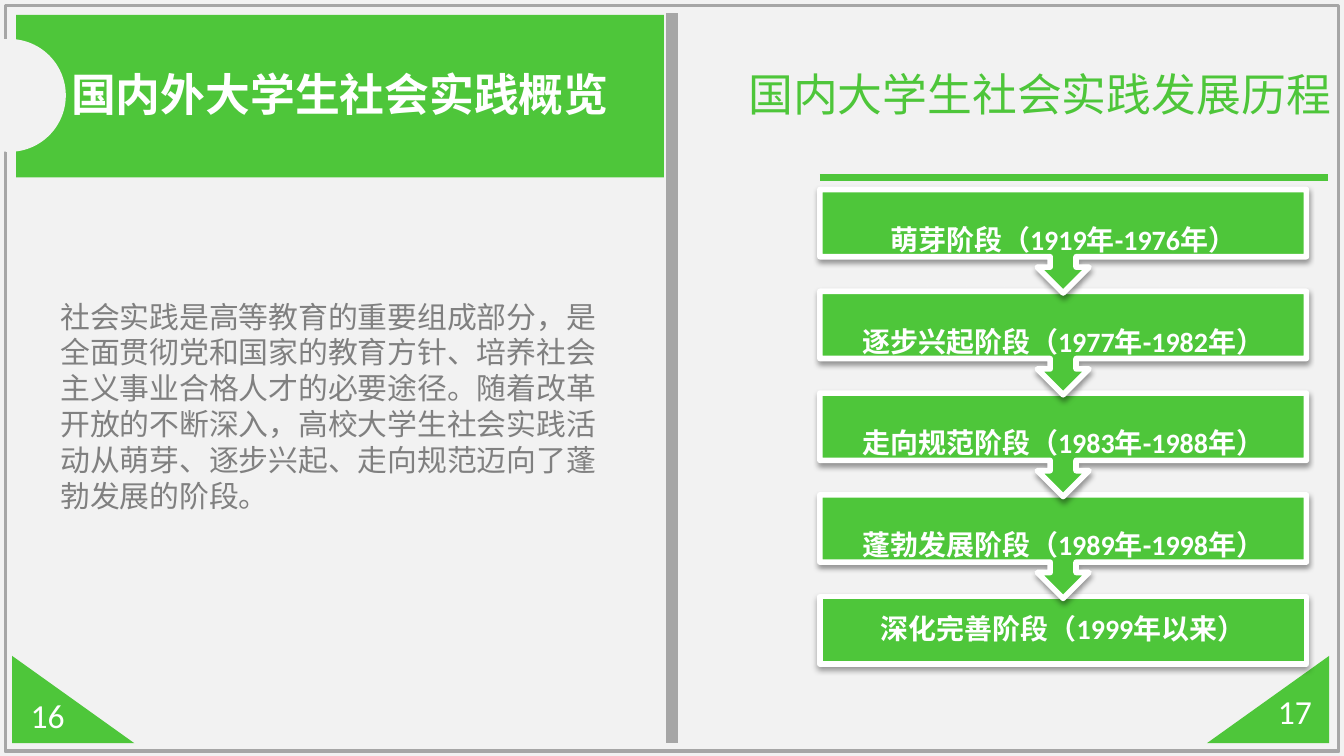
from dataclasses import dataclass

from lxml.etree import SubElement
from pptx import Presentation
from pptx.dml.color import RGBColor
from pptx.enum.shapes import MSO_CONNECTOR as Connector, MSO_SHAPE as Shape
from pptx.enum.text import MSO_ANCHOR as Anchor, PP_ALIGN as Align
from pptx.oxml import parse_xml
from pptx.oxml.ns import nsdecls, qn
from pptx.util import Inches, Pt

COLORS = {"green": "4EC63A", "page": "F2F2F2", "frame": "A6A6A6",
          "body": "808080", "white": "FFFFFF"}
CHINESE_FONT = "Noto Sans CJK SC"
COLUMNS, ROWS = 100, 56.25
UNIT = Inches(10) / COLUMNS
STAGES = ["萌芽阶段（1919年-1976年）", "逐步兴起阶段（1977年-1982年）",
          "走向规范阶段（1983年-1988年）", "蓬勃发展阶段（1989年-1998年）",
          "深化完善阶段（1999年以来）"]
OVERVIEW = ("社会实践是高等教育的重要组成部分，是全面贯彻党和国家的教育方针、"
            "培养社会主义事业合格人才的必要途径。随着改革开放的不断深入，"
            "高校大学生社会实践活动从萌芽、逐步兴起、走向规范迈向了蓬勃发展的阶段。")


@dataclass
class Box:
    """A region measured in grid columns and rows."""
    left: float
    top: float
    width: float
    height: float

    def inner(self, left, top, width, height):
        """Return a box placed relative to this one."""
        return Box(self.left + left, self.top + top, width, height)

    def lengths(self):
        """Return left, top, width and height as slide lengths."""
        return [round(value * UNIT) for value in
                (self.left, self.top, self.width, self.height)]


def color(name):
    """Return the named colour."""
    return RGBColor.from_string(COLORS[name])


def add_block(shapes, kind, box, fill=None, line=None, line_width=1):
    """Add a preset shape with plain fill and outline."""
    shape = shapes.add_shape(kind, *box.lengths())
    shape.shadow.inherit = False
    if fill:
        shape.fill.solid()
        shape.fill.fore_color.rgb = color(fill)
    else:
        shape.fill.background()
    if line:
        shape.line.color.rgb = color(line)
        shape.line.width = Pt(line_width)
    else:
        shape.line.fill.background()
    return shape


def add_rule(shapes, box, line, line_width):
    """Add a straight line across the box's diagonal."""
    left, top, width, height = box.lengths()
    rule = shapes.add_connector(Connector.STRAIGHT, left, top, left + width, top + height)
    rule.line.color.rgb = color(line)
    rule.line.width = Pt(line_width)
    SubElement(rule._element.spPr, qn("a:effectLst"))


def add_text(shapes, box, text, size, fill="white", font=CHINESE_FONT, bold=False,
             align=Align.LEFT, anchor=Anchor.TOP, inset=None, spacing=None):
    """Add a wrapped one-paragraph text box."""
    frame = shapes.add_textbox(*box.lengths()).text_frame
    frame.word_wrap = True
    frame.vertical_anchor = anchor
    if inset is not None:
        frame.margin_left = frame.margin_right = Inches(inset)
        frame.margin_top = frame.margin_bottom = Inches(inset)
    paragraph = frame.paragraphs[0]
    paragraph.alignment = align
    paragraph.line_spacing = spacing
    run = paragraph.add_run()
    run.text = text
    run.font.size = Pt(size)
    run.font.name = font
    run.font.bold = bold
    run.font.color.rgb = color(fill)
    SubElement(run._r.get_or_add_rPr(), qn("a:ea")).set("typeface", CHINESE_FONT)


def add_drop_shadow(shape):
    """Give a shape a soft shadow falling downwards."""
    properties = shape._element.spPr
    properties.remove(properties.find(qn("a:effectLst")))
    properties.append(parse_xml(
        f'<a:effectLst {nsdecls("a")}><a:outerShdw blurRad="{Pt(3.1)}" dist="{Pt(1.6)}" '
        'dir="5400000" rotWithShape="0"><a:srgbClr val="000000"><a:alpha val="38000"/>'
        '</a:srgbClr></a:outerShdw></a:effectLst>'))


def draw_frame(shapes, box):
    """Draw the border and the spine between the pages."""
    border = box.inner(0.4, 0.4, box.width - 0.8, box.height - 0.75)
    add_block(shapes, Shape.RECTANGLE, border, line="frame", line_width=2)
    add_rule(shapes, box.inner(box.width / 2, 1, 0, 54.3), "frame", 6)


def draw_corner(shapes, box, number, number_offset, mirrored=False):
    """Draw a page number on its corner triangle."""
    corner = add_block(shapes, Shape.ISOSCELES_TRIANGLE, box, fill="green")
    corner.adjustments[0] = 1
    if mirrored:
        corner._element.spPr.xfrm.set("flipH", "1")
    add_text(shapes, box.inner(*number_offset, 7.1, 4), number, 18, font="Calibri")


def draw_stages(shapes, box, stages):
    """Stack the stages from the bottom up, each pointing to the next."""
    last = len(stages) - 1
    body_height, callout_height = 5, 7.7
    pitch = (box.height - body_height) / last
    for index in range(last, -1, -1):
        is_last = index == last
        height = body_height if is_last else callout_height
        kind = Shape.RECTANGLE if is_last else Shape.UP_ARROW_CALLOUT
        place = box.inner(0, index * pitch, box.width, height)
        stage = add_block(shapes, kind, place, "green", "white", 3)
        stage.rotation = 0 if is_last else 180
        add_drop_shadow(stage)
        add_text(shapes, place, stages[index], 15, font="Calibri", bold=True,
                 align=Align.CENTER, anchor=Anchor.MIDDLE, inset=0.12, spacing=0.9)


def draw_left_page(shapes, box):
    """Draw the banner, the overview and the left page number."""
    add_block(shapes, Shape.RECTANGLE, box.inner(1.2, 1.1, 48.2, 12.1), fill="green")
    add_block(shapes, Shape.OVAL, box.inner(-3.5, 2.9, 8.4, 8.4), fill="page")
    add_text(shapes, box.inner(4.3, 4.5, 44.1, 9.1), "国内外大学生社会实践概览", 24, bold=True)
    add_text(shapes, box.inner(3.5, 21.7, 42.8, 17), OVERVIEW, 16, fill="body")
    draw_corner(shapes, box.inner(0.9, 48.8, 9.1, 6.5), "16", (0.4, 2.4), mirrored=True)


def draw_right_page(shapes, box):
    """Draw the heading, the stages and the right page number."""
    draw_corner(shapes, box.inner(39.8, 48.8, 9.1, 6.5), "17", (4.3, 2.1))
    add_text(shapes, box.inner(4.7, 4.5, 46.5, 13.1), "国内大学生社会实践发展历程", 24, fill="green")
    add_rule(shapes, box.inner(11, 13.2, 37.8, 0), "green", 4)
    group = shapes.add_group_shape()
    draw_stages(group.shapes, box.inner(11, 14.1, 36.2, 35.3), STAGES)


def main():
    """Build and save the presentation."""
    presentation = Presentation()
    presentation.slide_width = round(COLUMNS * UNIT)
    presentation.slide_height = round(ROWS * UNIT)
    slide = presentation.slides.add_slide(presentation.slide_layouts[6])
    slide.background.fill.solid()
    slide.background.fill.fore_color.rgb = color("page")
    half = COLUMNS / 2
    draw_frame(slide.shapes, Box(0, 0, COLUMNS, ROWS))
    draw_left_page(slide.shapes, Box(0, 0, half, ROWS))
    draw_right_page(slide.shapes, Box(half, 0, half, ROWS))
    presentation.save("out.pptx")


if __name__ == "__main__":
    main()
